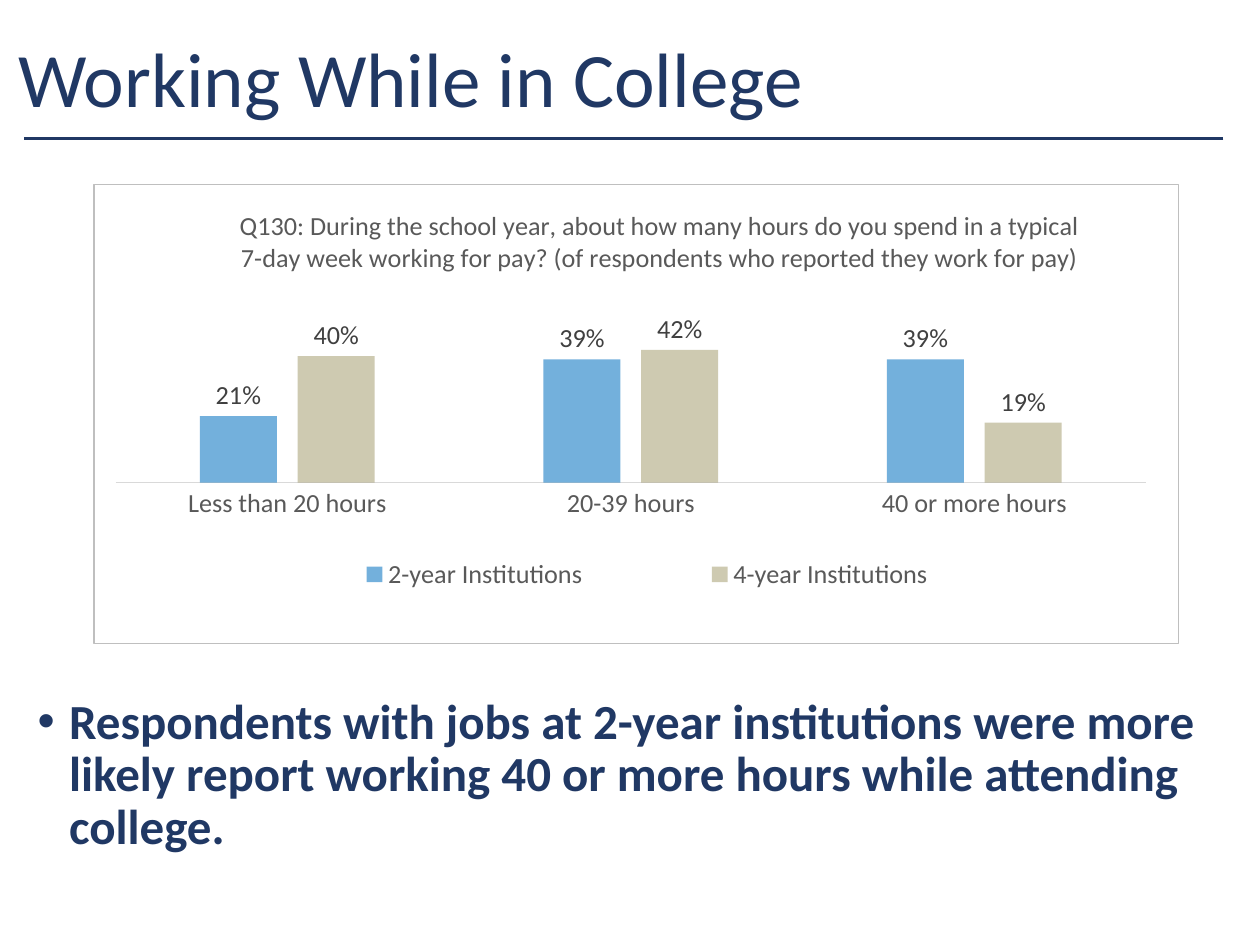
import pptx
import pptx.chart.data
import pptx.dml.color
import pptx.enum.chart
import pptx.enum.shapes
import pptx.enum.text
import pptx.oxml
import pptx.oxml.ns
import pptx.util
from lxml import etree
from pptx.util import Inches

FONT = "Calibri"
COLORS = {
    "navy": "203864", "two_year": "0070C0", "four_year": "948A54",
    "text": "595959", "label": "404040", "axis": "D9D9D9", "border": "BFBFBF",
}
HOURS = ["Less than 20 hours", "20-39 hours", "40 or more hours"]
INSTITUTIONS = [
    ("2-year Institutions", [21, 39, 39], "two_year", 55),
    ("4-year Institutions", [40, 42, 19], "four_year", 45),
]
QUESTION = (
    "Q130: During the school year, about how many hours do you spend in a typical "
    "7-day week working for pay? (of respondents who reported they work for pay)"
)
FINDING = (
    "Respondents with jobs at 2-year institutions were more likely report "
    "working 40 or more hours while attending college."
)
PERCENT = '0"%"'


def qn(tag):
    return pptx.oxml.ns.qn(tag)


def rgb(color):
    return pptx.dml.color.RGBColor.from_string(COLORS[color])


def style_font(font, size, color, bold=False):
    font.name = FONT
    font.size = pptx.util.Pt(size)
    font.bold = bold
    font.color.rgb = rgb(color)


def set_layout(parent, after, left, top, width=None, height=None, inner=False):
    for existing in parent.findall(qn("c:layout")):
        parent.remove(existing)
    layout = etree.Element(qn("c:layout"))
    manual = etree.SubElement(layout, qn("c:manualLayout"))
    values = [("layoutTarget", "inner" if inner else None),
              ("xMode", "edge"), ("yMode", "edge"),
              ("x", left), ("y", top), ("w", width), ("h", height)]
    for tag, value in values:
        if value is not None:
            etree.SubElement(manual, qn(f"c:{tag}")).set("val", str(value))
    if after:
        parent.find(qn(after)).addnext(layout)
    else:
        parent.insert(0, layout)


def add_text(slide, box, text, size, bold=False):
    frame = slide.shapes.add_textbox(*box).text_frame
    frame.word_wrap = True
    frame.text = text
    paragraph = frame.paragraphs[0]
    paragraph.line_spacing = 0.9
    style_font(paragraph.runs[0].font, size, "navy", bold)
    return frame


def add_heading(slide, left, top, width, height):
    heading = add_text(slide, (left, top, width, height), "Working While in College", 44)
    heading.vertical_anchor = pptx.enum.text.MSO_ANCHOR.MIDDLE
    rule_y = Inches(1.1)
    rule = slide.shapes.add_connector(
        pptx.enum.shapes.MSO_CONNECTOR.STRAIGHT, Inches(9.71), rule_y, Inches(0.19), rule_y)
    rule.line.color.rgb = rgb("navy")
    rule.line.width = pptx.util.Pt(1.75)
    etree.SubElement(rule._element.spPr, qn("a:effectLst"))


def add_finding(slide, left, top, width, height):
    finding = add_text(slide, (left, top, width, height), FINDING, 28, True)
    properties = finding.paragraphs[0]._p.get_or_add_pPr()
    properties.set("marL", str(Inches(0.25)))
    properties.set("indent", str(Inches(-0.25)))
    etree.SubElement(properties, qn("a:buFont")).set("typeface", "Arial")
    etree.SubElement(properties, qn("a:buChar")).set("char", "•")


def style_series(series, color, alpha):
    series.format.fill.solid()
    series.format.fill.fore_color.rgb = rgb(color)
    series.invert_if_negative = False
    fill_color = series._element.find(".//" + qn("a:srgbClr"))
    etree.SubElement(fill_color, qn("a:alpha")).set("val", str(alpha * 1000))
    labels = series.data_labels
    labels.show_value = True
    labels.number_format = PERCENT
    labels.number_format_is_linked = False
    labels.position = pptx.enum.chart.XL_LABEL_POSITION.OUTSIDE_END
    style_font(labels.font, 15, "label")


def style_axes(chart):
    hours_axis, share_axis = chart.category_axis, chart.value_axis
    for axis in (hours_axis, share_axis):
        axis.major_tick_mark = axis.minor_tick_mark = pptx.enum.chart.XL_TICK_MARK.NONE
        axis.has_major_gridlines = False
    style_font(hours_axis.tick_labels.font, 15, "text")
    hours_axis.format.line.color.rgb = rgb("axis")
    hours_axis.format.line.width = pptx.util.Pt(0.75)
    share_axis.minimum_scale = 0
    share_axis.maximum_scale = 45
    share_axis.tick_label_position = pptx.enum.chart.XL_TICK_LABEL_POSITION.NONE
    share_axis.format.line.fill.background()


def add_border(chart):
    border = pptx.oxml.parse_xml(
        f'<c:spPr {pptx.oxml.ns.nsdecls("c", "a")}><a:noFill/>'
        f'<a:ln w="{pptx.util.Pt(0.75)}"><a:solidFill><a:srgbClr val="{COLORS["border"]}"/>'
        '</a:solidFill></a:ln></c:spPr>')
    chart._chartSpace.find(qn("c:chart")).addnext(border)


def add_hours_chart(slide, left, top, width, height):
    data = pptx.chart.data.CategoryChartData(number_format=PERCENT)
    data.categories = HOURS
    for name, shares, _, _ in INSTITUTIONS:
        data.add_series(name, shares)
    chart = slide.shapes.add_chart(
        pptx.enum.chart.XL_CHART_TYPE.COLUMN_CLUSTERED, left, top, width, height, data).chart
    chart.font.name = FONT
    chart.font.size = pptx.util.Pt(10)

    columns = chart.plots[0]
    columns.gap_width = 219
    columns.overlap = -27
    columns.vary_by_categories = False
    for series, (_, _, color, alpha) in zip(columns.series, INSTITUTIONS):
        style_series(series, color, alpha)
    style_axes(chart)

    chart.has_title = True
    question = chart.chart_title.text_frame
    question.text = QUESTION
    style_font(question.paragraphs[0].runs[0].font, 15, "text")
    chart.has_legend = True
    chart.legend.position = pptx.enum.chart.XL_LEGEND_POSITION.BOTTOM
    chart.legend.include_in_layout = False
    style_font(chart.legend.font, 15, "text")

    set_layout(chart.chart_title._element, "c:tx", 0.13, 0.04)
    set_layout(chart.legend._element, "c:legendPos", 0.14, 0.8, 0.74, 0.1)
    plot_area = chart._chartSpace.find(".//" + qn("c:plotArea"))
    set_layout(plot_area, None, 0.02, 0.34, 0.95, 0.31, inner=True)
    add_border(chart)


def main():
    presentation = pptx.Presentation()
    presentation.slide_width = Inches(10)
    presentation.slide_height = Inches(7.5)
    slide = presentation.slides.add_slide(presentation.slide_layouts[6])
    add_heading(slide, Inches(0.05), Inches(0.22), Inches(8.62), Inches(0.87))
    add_finding(slide, Inches(0.2), Inches(5.48), Inches(9.69), Inches(1.35))
    add_hours_chart(slide, Inches(0.74), Inches(1.46), Inches(8.62), Inches(3.65))
    presentation.save("out.pptx")


if __name__ == "__main__":
    main()
